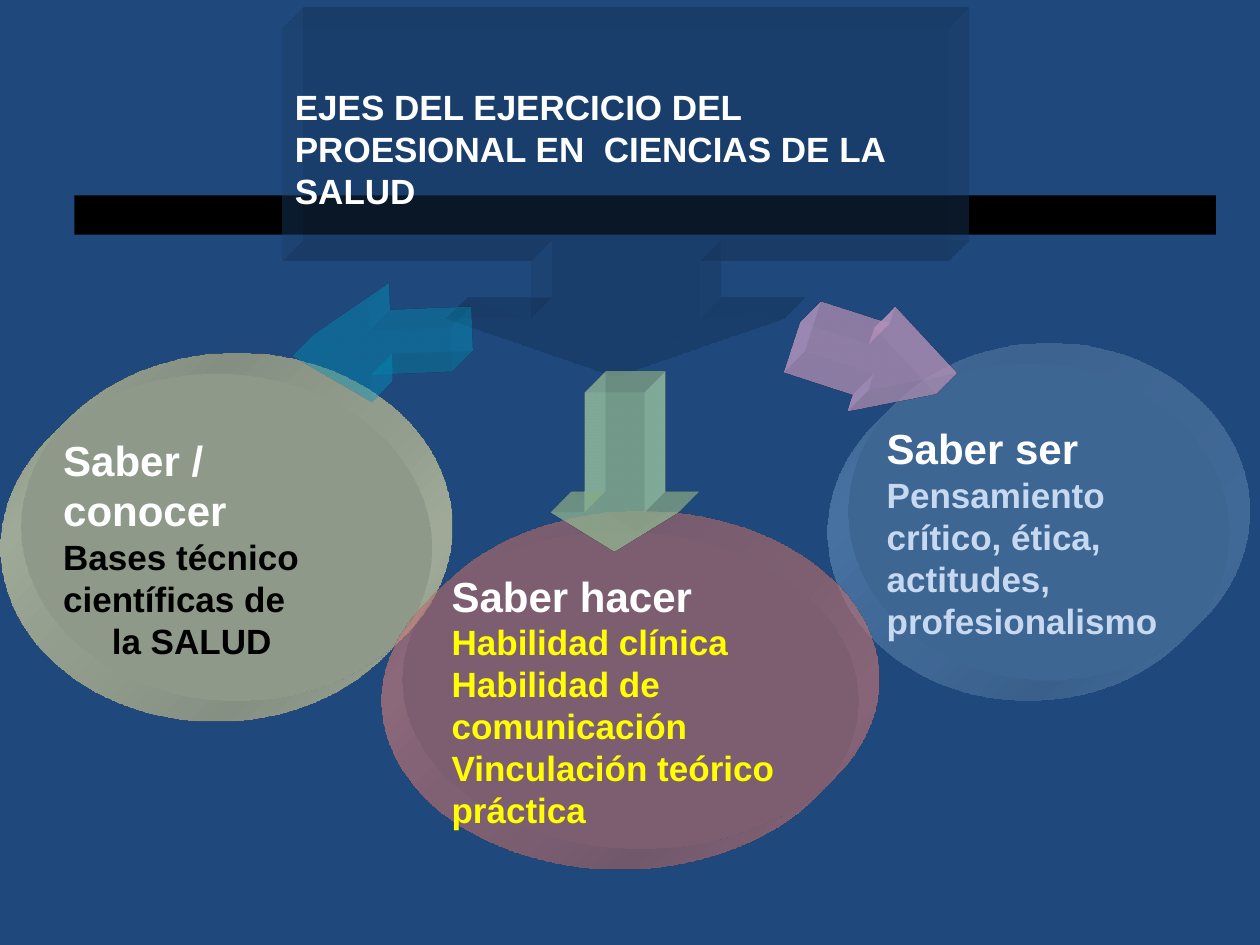
from lxml.etree import SubElement
from pptx import Presentation
from pptx.dml.color import RGBColor
from pptx.enum.shapes import MSO_SHAPE as Shape
from pptx.enum.text import MSO_ANCHOR as Anchor, MSO_AUTO_SIZE as AutoSize, PP_ALIGN as Align
from pptx.oxml.ns import qn
from pptx.util import Cm, Pt

FONT = "Arial"
WHITE = "FFFFFF"


def color(hex_code):
    return RGBColor.from_string(hex_code)


def set_fill(shape, hex_code, opacity=100):
    shape.fill.solid()
    shape.fill.fore_color.rgb = color(hex_code)
    if opacity < 100:
        tint = shape._element.spPr.find(qn("a:solidFill"))[0]
        SubElement(tint, qn("a:alpha"), val=str(opacity * 1000))


def add_depth(shape, hex_code):
    """Extrude the shape towards the top right."""
    props = shape._element.spPr
    scene = SubElement(props, qn("a:scene3d"))
    SubElement(scene, qn("a:camera"), prst="legacyObliqueTopRight")
    SubElement(scene, qn("a:lightRig"), rig="legacyFlat3", dir="b")
    solid = SubElement(props, qn("a:sp3d"), extrusionH="430200",
                       prstMaterial="legacyMatte")
    side = SubElement(solid, qn("a:extrusionClr"))
    SubElement(side, qn("a:srgbClr"), val=hex_code)


def add_block(slide, kind, box, hex_code, opacity=100, adjust=(), rotation=0):
    block = slide.shapes.add_shape(kind, *map(Cm, box))
    for index, value in enumerate(adjust):
        block.adjustments[index] = value
    block.rotation = rotation
    block.shadow.inherit = False
    block.line.fill.background()
    set_fill(block, hex_code, opacity)
    if opacity < 100:
        add_depth(block, hex_code)
    return block


def style_paragraph(paragraph, size, hex_code):
    paragraph.alignment = Align.LEFT
    for run in paragraph.runs:
        font = run.font
        font.name, font.size, font.bold = FONT, Pt(size), True
        font.color.rgb = color(hex_code)


def add_knowledge(slide, box, hex_code, opacity, heading, details, detail_color):
    """Ellipse with a heading and its details."""
    knowledge = add_block(slide, Shape.OVAL, box, hex_code, opacity)
    frame = knowledge.text_frame
    frame.word_wrap = True
    frame.vertical_anchor = Anchor.MIDDLE
    frame.margin_left = frame.margin_right = 0
    frame.text = "\n".join([heading, *details])
    first, *rest = frame.paragraphs
    style_paragraph(first, 24, WHITE)
    for paragraph in rest:
        style_paragraph(paragraph, 20, detail_color)
    return knowledge


def add_title(slide, box, text):
    title = slide.shapes.title
    title.left, title.top, title.width, title.height = map(Cm, box)
    frame = title.text_frame
    frame.text = text
    frame.word_wrap = True
    frame.auto_size = AutoSize.NONE
    frame.vertical_anchor = Anchor.MIDDLE
    style_paragraph(frame.paragraphs[0], 20, WHITE)
    # Bring the title in front of the callout
    slide.shapes._spTree.append(title._element)


def main():
    deck = Presentation()
    deck.slide_width, deck.slide_height = Cm(25.4), Cm(19.05)
    slide = deck.slides.add_slide(deck.slide_layouts[5])
    slide.background.fill.solid()
    slide.background.fill.fore_color.rgb = color("1F497D")

    # Black band behind the callout
    add_block(slide, Shape.RECTANGLE, (1.5, 3.94, 23.01, 0.79), "000000")

    # Right-hand knowledge
    add_knowledge(slide, (16.69, 7.32, 8.1, 6.81), "99CCFF", 24, "Saber ser",
                  ["Pensamiento crítico, ética, actitudes, profesionalismo"], "C6D9F1")

    # Title callout
    add_block(slide, Shape.DOWN_ARROW_CALLOUT, (5.69, 0.58, 13.41, 7.01),
              "1F497D", 27, (0.486, 0.486, 0.167, 0.667))
    add_title(slide, (5.69, 0.66, 13.41, 4.68),
              "EJES DEL EJERCICIO DEL PROESIONAL EN  CIENCIAS DE LA SALUD")

    # Left-hand and central knowledge
    knowing = add_knowledge(slide, (0, 7.54, 8.71, 7.01), "FFFFCC", 51, "Saber / conocer",
                            ["Bases técnico científicas de", "la SALUD"], "000000")
    last_line = knowing.text_frame.paragraphs[-1]
    last_line._p.get_or_add_pPr().set("indent", str(Cm(0.98)))
    add_knowledge(slide, (7.7, 10.72, 9.6, 6.81), "FF9999", 40, "Saber hacer",
                  ["Habilidad clínica", "Habilidad de comunicación",
                   "Vinculación teórico práctica"], "FFFF00")

    # Arrows from the callout to each knowledge
    add_block(slide, Shape.LEFT_ARROW, (5.89, 6.12, 3.2, 1.98),
              "00CCFF", 24, (0.447, 0.792), 357.8)
    add_block(slide, Shape.LEFT_ARROW, (15.9, 6.58, 3.05, 1.78),
              "FFCCFF", 51, (0.598, 0.897), 197.9)
    add_block(slide, Shape.DOWN_ARROW, (11.1, 7.92, 2.59, 3.2),
              "CCFFCC", 51, (0.468, 0.307))

    deck.save("out.pptx")


if __name__ == "__main__":
    main()
